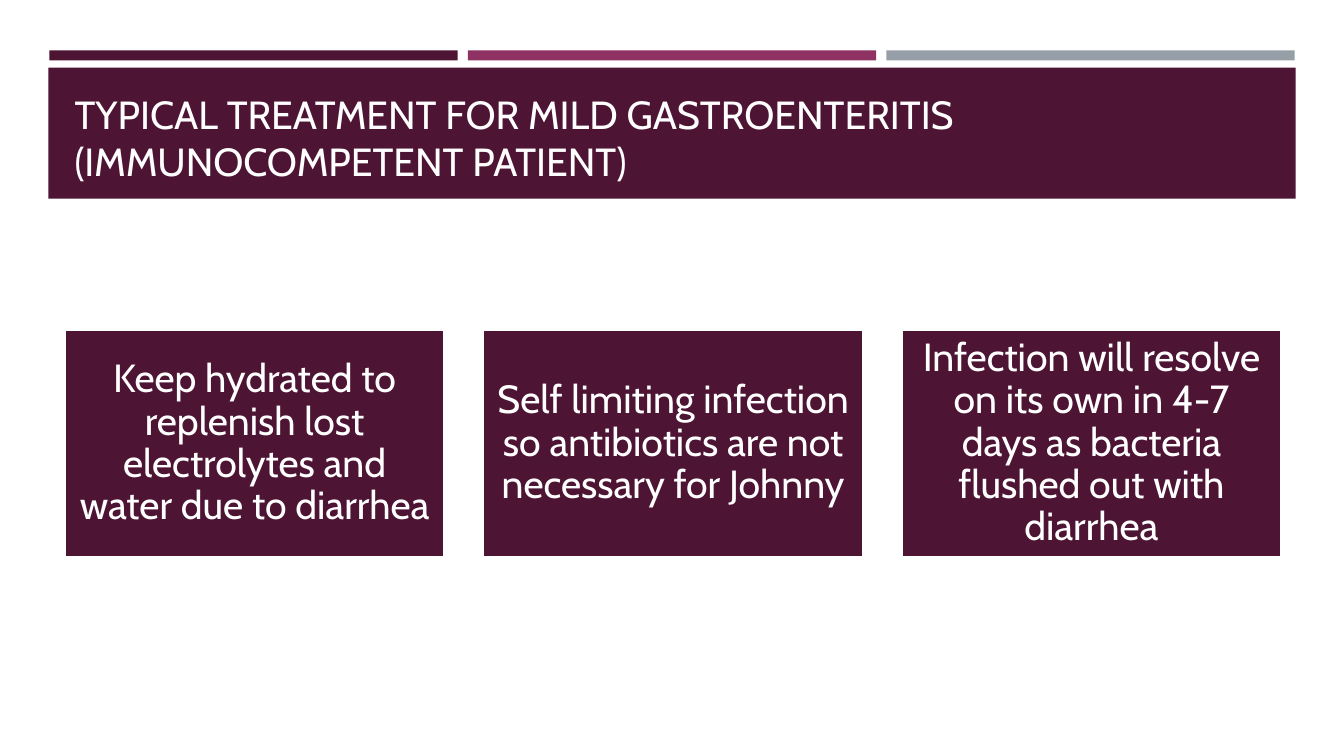
"""Build a slide on the treatment of mild gastroenteritis."""
import pptx
import pptx.dml.color
import pptx.enum.shapes
import pptx.enum.text
import pptx.util

Inches = pptx.util.Inches
Pt = pptx.util.Pt
RGBColor = pptx.dml.color.RGBColor
Align = pptx.enum.text.PP_ALIGN
Anchor = pptx.enum.text.MSO_ANCHOR

PLUM = RGBColor(0x4D, 0x14, 0x34)
BERRY = RGBColor(0x90, 0x31, 0x63)
GRAY = RGBColor(0x96, 0x9F, 0xA7)
WHITE = RGBColor(0xFF, 0xFF, 0xFF)
IVORY = RGBColor(0xFF, 0xFE, 0xFF)

TITLE = "TYPICAL TREATMENT FOR MILD GASTROENTERITIS (IMMUNOCOMPETENT PATIENT)"
CARDS = [
    "Keep hydrated to replenish lost electrolytes and water due to diarrhea",
    "Self limiting infection so antibiotics are not necessary for Johnny",
    "Infection will resolve on its own in 4-7 days as bacteria flushed out with diarrhea",
]


class Deck:
    font = "Cabin"
    size = Pt(28)

    def __init__(self):
        self.prs = pptx.Presentation()
        self.prs.slide_width = Inches(13.33)
        self.prs.slide_height = Inches(7.5)
        self.slide = self.prs.slides.add_slide(self.prs.slide_layouts[5])

    def label(self, shape, text, color, align, anchor):
        frame = shape.text_frame
        frame.text = text
        frame.word_wrap = True
        frame.auto_size = pptx.enum.text.MSO_AUTO_SIZE.NONE
        frame.vertical_anchor = anchor
        para = frame.paragraphs[0]
        para.alignment = align
        font = para.runs[0].font
        font.name, font.size = self.font, self.size
        font.color.rgb = color
        return frame

    def block(self, left, top, width, height, fill):
        kind = pptx.enum.shapes.MSO_SHAPE.RECTANGLE
        shape = self.slide.shapes.add_shape(
            kind, Inches(left), Inches(top), Inches(width), Inches(height))
        shape.shadow.inherit = False
        shape.fill.solid()
        shape.fill.fore_color.rgb = fill
        shape.line.fill.background()
        return shape

    def title(self, text, left, top, width, height):
        shape = self.slide.shapes.title
        shape.left, shape.top = Inches(left), Inches(top)
        shape.width, shape.height = Inches(width), Inches(height)
        self.label(shape, text, IVORY, Align.LEFT, Anchor.BOTTOM)
        shape.element.getparent().append(shape.element)

    def card(self, text, left, top, width, height):
        shape = self.block(left, top, width, height, PLUM)
        shape.line.color.rgb = WHITE
        shape.line.width = Pt(1.75)
        frame = self.label(shape, text, WHITE, Align.CENTER, Anchor.MIDDLE)
        frame.margin_left = frame.margin_right = Inches(0.12)
        frame.margin_top = frame.margin_bottom = Inches(0.12)
        frame.paragraphs[0].line_spacing = 0.9


def main():
    deck = Deck()
    for i, color in enumerate([PLUM, BERRY, GRAY]):
        deck.block(0.49 + 4.15 * i, 0.5, 4.05, 0.1, color)
    deck.block(0.48, 0.67, 12.37, 1.3, PLUM)
    deck.title(TITLE, 0.64, 0.77, 12.06, 1.11)
    for i, text in enumerate(CARDS):
        deck.card(text, 0.64 + 4.15 * i, 3.27, 3.77, 2.26)
    deck.prs.save("out.pptx")


if __name__ == "__main__":
    main()
